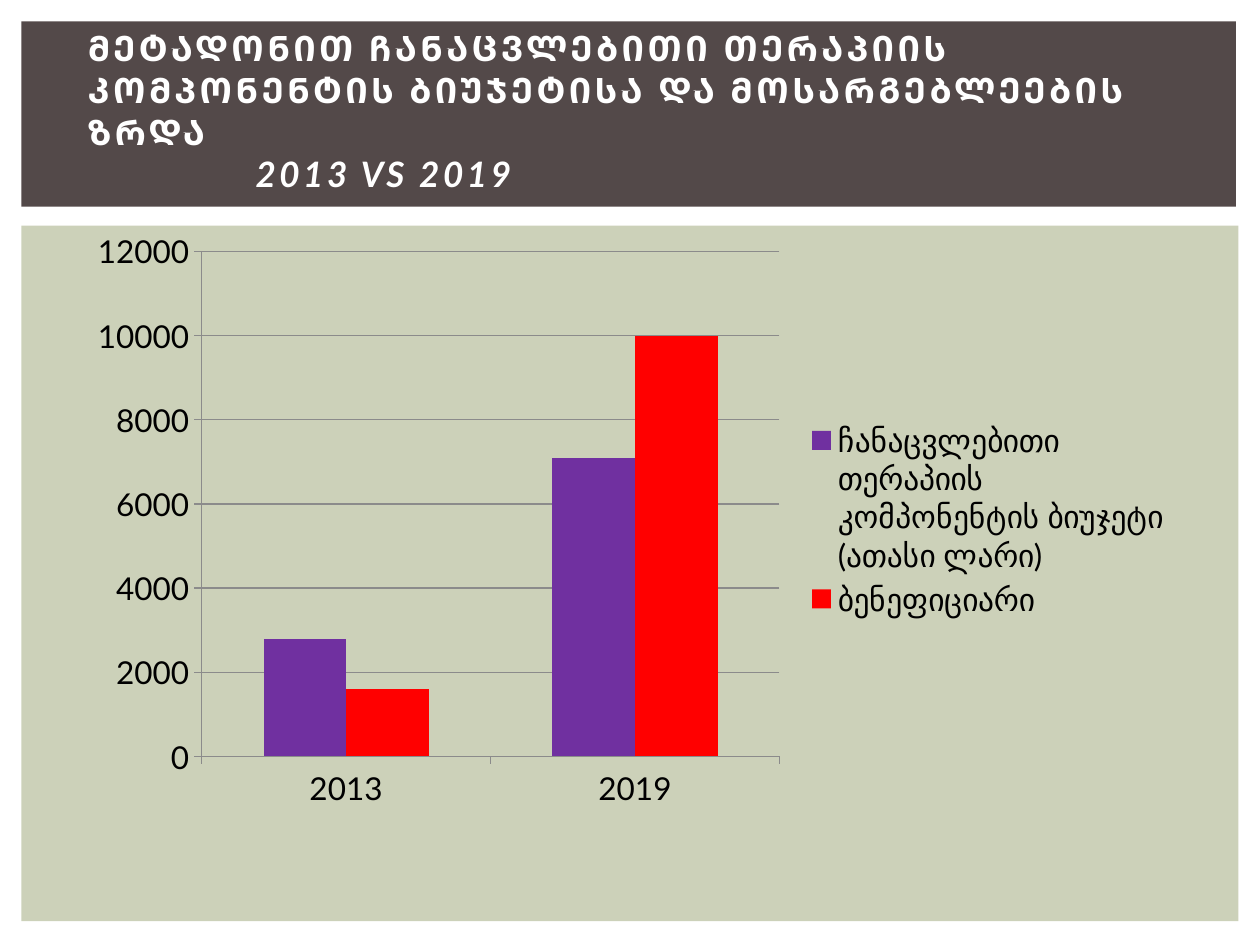
from pptx import Presentation
from pptx.chart.data import CategoryChartData
from pptx.dml.color import RGBColor
from pptx.enum.chart import XL_CHART_TYPE as ChartType, XL_LEGEND_POSITION as LegendPosition
from pptx.enum.chart import XL_TICK_MARK as TickMark
from pptx.enum.shapes import MSO_SHAPE as Shape
from pptx.enum.text import MSO_ANCHOR as Anchor
from pptx.util import Inches, Pt

SAGE = RGBColor(0xCC, 0xD1, 0xB9)
BROWN = RGBColor(0x53, 0x49, 0x49)
WHITE = RGBColor(0xFF, 0xFF, 0xFF)
BLACK = RGBColor(0x00, 0x00, 0x00)
GRAY = RGBColor(0x8B, 0x8B, 0x8B)
PURPLE = RGBColor(0x70, 0x30, 0xA0)
RED = RGBColor(0xFF, 0x00, 0x00)

HEADING = "ᲛᲔᲢᲐᲓᲝᲜᲘᲗ ᲩᲐᲜᲐᲪᲕᲚᲔᲑᲘᲗᲘ ᲗᲔᲠᲐᲞᲘᲘᲡ ᲙᲝᲛᲞᲝᲜᲔᲜᲢᲘᲡ ᲑᲘᲣᲯᲔᲢᲘᲡᲐ ᲓᲐ ᲛᲝᲡᲐᲠᲒᲔᲑᲚᲔᲔᲑᲘᲡ ᲖᲠᲓᲐ"
YEARS = ["2013", "2019"]
SERIES = [
    ("ჩანაცვლებითი თერაპიის კომპონენტის ბიუჯეტი (ათასი ლარი)", [2800, 7100], PURPLE),
    ("ბენეფიციარი", [1600, 10000], RED),
]


def write(paragraph, text, *, font, size, color, bold=False, italic=False, spacing=0, indent=0):
    """Add a run; spacing is in points, indent is a length."""
    run = paragraph.add_run()
    run.text = text
    run.font.name = font
    run.font.size = Pt(size)
    run.font.color.rgb = color
    run.font.bold = bold
    run.font.italic = italic
    run.font._element.set("spc", str(spacing * 100))
    properties = paragraph._p.get_or_add_pPr()
    properties.set("marL", str(int(indent)))
    properties.set("indent", "0")


class SlideBuilder:
    font = "Lato"
    title_size = 20
    chart_size = 18

    def __init__(self, slide):
        self.slide = slide

    def panel(self, left, top, width, height, color):
        panel = self.slide.shapes.add_shape(
            Shape.RECTANGLE, Inches(left), Inches(top), Inches(width), Inches(height))
        panel.shadow.inherit = False
        panel.fill.solid()
        panel.fill.fore_color.rgb = color
        panel.line.fill.background()

    def title(self, left, top, width, height, heading, period):
        frame = self.slide.shapes.add_textbox(
            Inches(left), Inches(top), Inches(width), Inches(height)).text_frame
        frame.word_wrap = True
        frame.vertical_anchor = Anchor.MIDDLE
        style = dict(font=self.font, size=self.title_size, color=WHITE, bold=True, spacing=2)
        write(frame.paragraphs[0], heading, **style)
        write(frame.add_paragraph(), period, italic=True, indent=Inches(1.33), **style)

    def column_chart(self, left, top, width, height, categories, series):
        data = CategoryChartData()
        data.categories = categories
        for name, values, _ in series:
            data.add_series(name, values)
        chart = self.slide.shapes.add_chart(
            ChartType.COLUMN_CLUSTERED, Inches(left), Inches(top),
            Inches(width), Inches(height), data).chart
        chart.has_title = False
        chart.font.name = self.font
        chart.font.size = Pt(self.chart_size)
        chart.font.color.rgb = BLACK
        chart.has_legend = True
        chart.legend.position = LegendPosition.RIGHT
        chart.legend.include_in_layout = False

        plot = chart.plots[0]
        plot.gap_width = 150
        plot.vary_by_categories = False
        for columns, (_, _, color) in zip(plot.series, series):
            columns.format.fill.solid()
            columns.format.fill.fore_color.rgb = color

        for axis in (chart.category_axis, chart.value_axis):
            axis.major_tick_mark = TickMark.OUTSIDE
            axis.minor_tick_mark = TickMark.NONE
            axis.format.line.color.rgb = GRAY
        chart.value_axis.has_major_gridlines = True
        chart.value_axis.major_gridlines.format.line.color.rgb = GRAY


def main():
    deck = Presentation()
    deck.slide_width, deck.slide_height = Inches(10), Inches(7.5)
    builder = SlideBuilder(deck.slides.add_slide(deck.slide_layouts[6]))
    builder.panel(0.17, 1.79, 9.66, 5.52, SAGE)
    builder.panel(0.17, 0.17, 9.64, 1.47, BROWN)
    builder.title(0.6, 0.42, 8.8, 0.91, HEADING, "2013 VS 2019")
    builder.column_chart(0.6, 1.75, 8.8, 4.75, YEARS, SERIES)
    deck.save("out.pptx")


if __name__ == "__main__":
    main()
